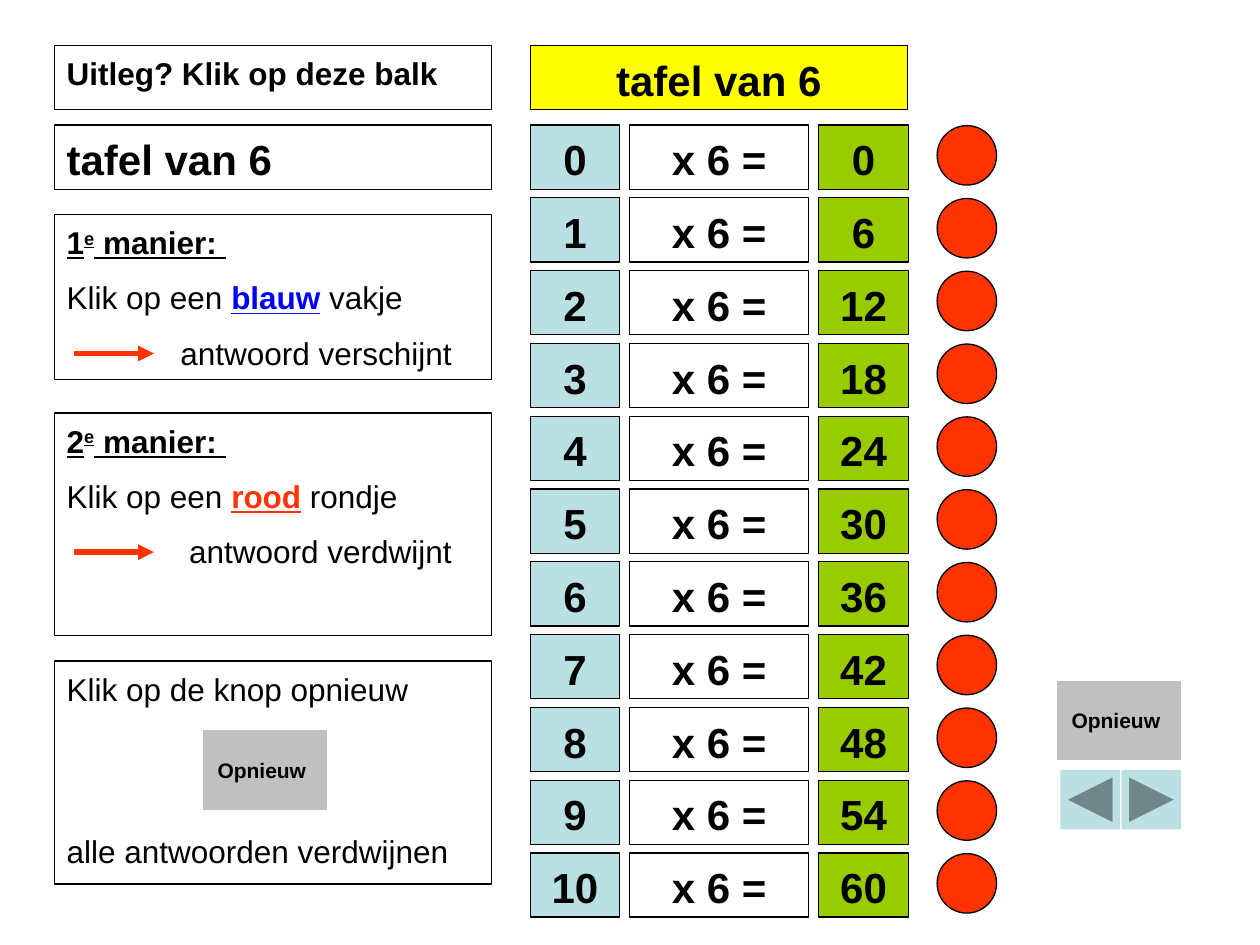
from lxml import etree
from pptx import Presentation
from pptx.dml.color import RGBColor
from pptx.enum.shapes import MSO_CONNECTOR, MSO_SHAPE
from pptx.enum.text import MSO_ANCHOR as Anchor, MSO_AUTO_SIZE as AutoSize, PP_ALIGN as Align
from pptx.oxml.ns import qn
from pptx.util import Pt

BLACK, WHITE, BLUE, RED = "000000", "FFFFFF", "0000FF", "FF3300"
PALE_BLUE, GREEN, YELLOW, GREY = "BBE0E3", "99CC00", "FFFF00", "C0C0C0"
TABLE_NUMBER = 6
BAR_HEIGHT = 36.7
ROW_PITCH = 41.6
PARAGRAPH_GAP = 10


def color(value):
    return RGBColor.from_string(value)


def style_shape(shape, fill=None, line=BLACK):
    if fill:
        shape.fill.solid()
        shape.fill.fore_color.rgb = color(fill)
    else:
        shape.fill.background()
    if line:
        shape.line.color.rgb = color(line)
        shape.line.width = Pt(0.75)
    else:
        shape.line.fill.background()


def add_shape(slide, kind, box, fill=None, line=BLACK):
    shape = slide.shapes.add_shape(kind, *map(Pt, box))
    shape.shadow.inherit = False
    style_shape(shape, fill, line)
    return shape


def format_paragraph(paragraph, size, bold=False, align=Align.LEFT, gap=0, indent=0):
    paragraph.alignment = align
    paragraph.space_before = Pt(gap)
    font = paragraph.font
    font.name, font.size, font.bold = "Arial", Pt(size), bold
    font.color.rgb = color(BLACK)
    if indent:
        paragraph._p.get_or_add_pPr().set("marL", str(Pt(indent)))


def prepare_frame(shape):
    frame = shape.text_frame
    frame.word_wrap = True
    frame.auto_size = AutoSize.NONE
    frame.vertical_anchor = Anchor.TOP
    frame.margin_top = Pt(5)
    return frame


def write_line(shape, text, size=24, align=Align.CENTER):
    paragraph = prepare_frame(shape).paragraphs[0]
    paragraph.text = text
    format_paragraph(paragraph, size, bold=True, align=align)


def add_title(slide, box):
    title = slide.shapes.title
    title.left, title.top, title.width, title.height = map(Pt, box)
    style_shape(title, YELLOW)
    write_line(title, f"tafel van {TABLE_NUMBER}")


def add_bar(slide, box, text, size):
    write_line(add_shape(slide, MSO_SHAPE.RECTANGLE, box), text, size, Align.LEFT)


def add_arrow(slide, left, top, length):
    arrow = slide.shapes.add_connector(
        MSO_CONNECTOR.STRAIGHT, Pt(left), Pt(top), Pt(left + length), Pt(top))
    arrow.line.color.rgb = color(RED)
    arrow.line.width = Pt(3)
    etree.SubElement(arrow.line._get_or_add_ln(), qn("a:tailEnd"), type="triangle")
    etree.SubElement(arrow._element.spPr, qn("a:effectLst"))


def add_method(slide, box, number, word, word_color, target, result, indent):
    left, top = box[:2]
    frame = prepare_frame(add_shape(slide, MSO_SHAPE.RECTANGLE, box))

    heading = frame.paragraphs[0]
    format_paragraph(heading, 18, bold=True)
    heading.font.underline = True
    for text in (number, "e", " manier: "):
        run = heading.add_run()
        run.text = text
        if text == "e":
            run.font._element.set("baseline", "30000")

    action = frame.add_paragraph()
    format_paragraph(action, 18, gap=PARAGRAPH_GAP)
    for text in ("Klik op een ", word, f" {target}"):
        run = action.add_run()
        run.text = text
        if text == word:
            run.font.bold = run.font.underline = True
            run.font.color.rgb = color(word_color)

    outcome = frame.add_paragraph()
    outcome.text = result
    format_paragraph(outcome, 18, gap=PARAGRAPH_GAP, indent=indent)
    add_arrow(slide, left + 11.5, top + 79.5, 45.4)


def add_reset_button(slide, left, top):
    button = add_shape(slide, MSO_SHAPE.ACTION_BUTTON_CUSTOM, (left, top, 70.6, 45.4), GREY, None)
    frame = button.text_frame
    frame.word_wrap = False
    frame.vertical_anchor = Anchor.MIDDLE
    paragraph = frame.paragraphs[0]
    paragraph.text = "Opnieuw "
    format_paragraph(paragraph, 12, bold=True, align=Align.CENTER)


def add_reset_help(slide, box):
    left, top = box[:2]
    frame = prepare_frame(add_shape(slide, MSO_SHAPE.RECTANGLE, box))
    first, last = frame.paragraphs[0], frame.add_paragraph()
    first.text = "Klik op de knop opnieuw"
    last.text = "alle antwoorden verdwijnen"
    format_paragraph(first, 18)
    format_paragraph(last, 18, gap=71)
    add_reset_button(slide, left + 85, top + 39.6)


def add_times_table(slide, left, top):
    for factor in range(11):
        row_top = top + factor * ROW_PITCH
        cells = (
            (0, 51.1, PALE_BLUE, f"{factor}"),
            (56.9, 102.2, WHITE, f"x {TABLE_NUMBER} ="),
            (164.9, 51.1, GREEN, f"{factor * TABLE_NUMBER}"),
        )
        for offset, width, fill, text in cells:
            box = (left + offset, row_top, width, BAR_HEIGHT)
            write_line(add_shape(slide, MSO_SHAPE.RECTANGLE, box, fill), text)
        add_shape(slide, MSO_SHAPE.OVAL, (left + 232.5, row_top + 0.4, 34, 34), RED)


def add_navigation(slide, left, top):
    add_reset_button(slide, left, top)
    kinds = (MSO_SHAPE.ACTION_BUTTON_BACK_OR_PREVIOUS, MSO_SHAPE.ACTION_BUTTON_FORWARD_OR_NEXT)
    for index, kind in enumerate(kinds):
        add_shape(slide, kind, (left + 2 + index * 35, top + 51, 34, 34), PALE_BLUE, None)


def main():
    presentation = Presentation()
    presentation.slide_width, presentation.slide_height = Pt(720), Pt(540)
    slide = presentation.slides.add_slide(presentation.slide_layouts[5])

    left, width = 31, 250
    add_title(slide, (303, 26, 215.6, BAR_HEIGHT))
    add_bar(slide, (left, 26, width, BAR_HEIGHT), "Uitleg? Klik op deze balk", 18)
    add_bar(slide, (left, 71.4, width, BAR_HEIGHT), f"tafel van {TABLE_NUMBER}", 24)
    add_method(slide, (left, 122.5, width, 94.5), "1", "blauw", BLUE,
               "vakje", "antwoord verschijnt", 65)
    add_method(slide, (left, 236, width, 127.4), "2", "rood", RED,
               "rondje", "antwoord verdwijnt", 70)
    add_reset_help(slide, (left, 377.8, width, 127.4))
    add_times_table(slide, 303, 71.4)
    add_navigation(slide, 604, 389)

    presentation.save("out.pptx")


if __name__ == "__main__":
    main()
